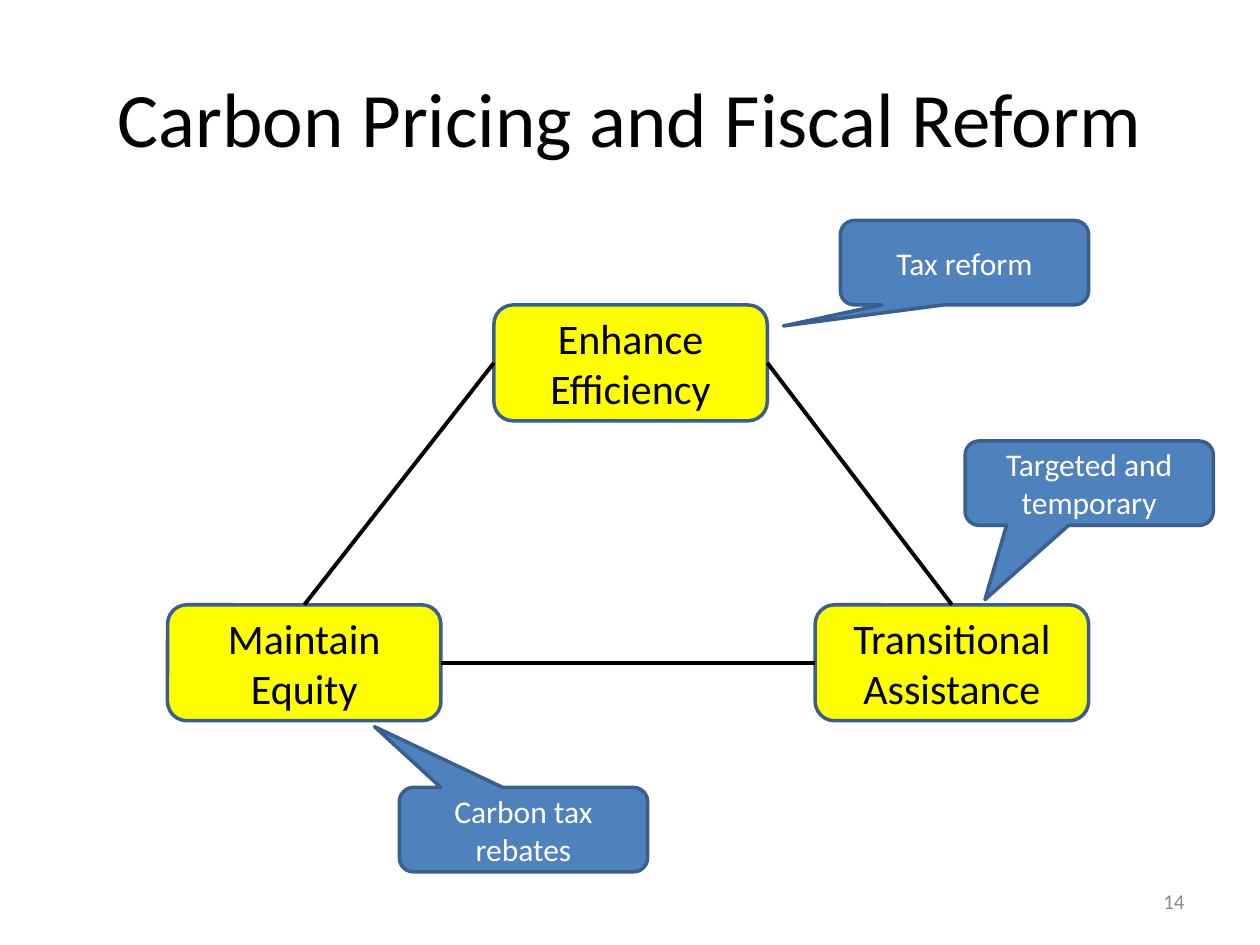
from pptx import Presentation
from pptx.dml.color import RGBColor
from pptx.enum.shapes import MSO_CONNECTOR, MSO_SHAPE
from pptx.enum.text import MSO_ANCHOR, PP_ALIGN
from pptx.oxml.ns import qn
from pptx.util import Inches, Pt
from lxml.etree import SubElement

BLACK = RGBColor(0x00, 0x00, 0x00)
WHITE = RGBColor(0xFF, 0xFF, 0xFF)
YELLOW = RGBColor(0xFF, 0xFF, 0x00)
BLUE = RGBColor(0x4F, 0x81, 0xBD)
DARK_BLUE = RGBColor(0x3A, 0x5F, 0x8C)
GRAY = RGBColor(0x8C, 0x8C, 0x8C)
FONT = "Calibri"

TITLE = "Carbon Pricing and Fiscal Reform"
PAGE_NUMBER = "14"

GOAL_SIZE = (2.17, 0.92)
GOALS = {  # text: (left, top)
    "Enhance Efficiency": (3.92, 2.42),
    "Maintain Equity": (1.33, 4.8),
    "Transitional Assistance": (6.47, 4.8),
}
TOP, LEFT, RIGHT = 0, 1, 3
LINKS = [  # from goal, side, to goal, side
    ("Enhance Efficiency", LEFT, "Maintain Equity", TOP),
    ("Enhance Efficiency", RIGHT, "Transitional Assistance", TOP),
    ("Maintain Equity", RIGHT, "Transitional Assistance", LEFT),
]

CALLOUT_SIZE = (1.97, 0.67)
CALLOUTS = [  # text, (left, top), pointer tip relative to the center
    ("Tax reform", (6.67, 1.75), (-0.73, 0.75)),
    ("Carbon tax rebates", (3.17, 6.25), (-0.6, -1.22)),
    ("Targeted and temporary", (7.66, 3.5), (-0.42, 1.38)),
]


def write(shape, text, size, color, alignment=PP_ALIGN.CENTER):
    frame = shape.text_frame
    frame.word_wrap = True
    frame.vertical_anchor = MSO_ANCHOR.MIDDLE
    paragraph = frame.paragraphs[0]
    paragraph.alignment = alignment
    run = paragraph.add_run()
    run.text = text
    run.font.name = FONT
    run.font.size = Pt(size)
    run.font.color.rgb = color


def add_box(slide, kind, position, size, fill, text, text_size, text_color):
    shape = slide.shapes.add_shape(kind, *map(Inches, position + size))
    shape.shadow.inherit = False
    shape.fill.solid()
    shape.fill.fore_color.rgb = fill
    shape.line.color.rgb = DARK_BLUE
    shape.line.width = Pt(2)
    write(shape, text, text_size, text_color)
    return shape


def add_link(slide, start, start_side, end, end_side):
    line = slide.shapes.add_connector(MSO_CONNECTOR.STRAIGHT, 0, 0, 0, 0)
    line.begin_connect(start, start_side)
    line.end_connect(end, end_side)
    line.line.color.rgb = BLACK
    line.line.width = Pt(2.25)
    SubElement(line.element.spPr, qn("a:effectLst"))


def main():
    presentation = Presentation()
    presentation.slide_width = Inches(10)
    presentation.slide_height = Inches(7.5)
    slide = presentation.slides.add_slide(presentation.slide_layouts[5])

    title = slide.shapes.title
    title.left, title.top, title.width, title.height = map(Inches, (0.5, 0.3, 9, 1.25))
    write(title, TITLE, 44, BLACK)

    goals = {
        text: add_box(slide, MSO_SHAPE.ROUNDED_RECTANGLE, position, GOAL_SIZE,
                      YELLOW, text, 24, BLACK)
        for text, position in GOALS.items()
    }
    for start, start_side, end, end_side in LINKS:
        add_link(slide, goals[start], start_side, goals[end], end_side)

    number = slide.shapes.add_textbox(*map(Inches, (7.17, 6.95, 2.33, 0.4)))
    write(number, PAGE_NUMBER, 12, GRAY, PP_ALIGN.RIGHT)

    for text, position, (tip_x, tip_y) in CALLOUTS:
        callout = add_box(slide, MSO_SHAPE.ROUNDED_RECTANGULAR_CALLOUT, position,
                          CALLOUT_SIZE, BLUE, text, 18, WHITE)
        callout.adjustments[0] = tip_x
        callout.adjustments[1] = tip_y

    presentation.save("out.pptx")


if __name__ == "__main__":
    main()
